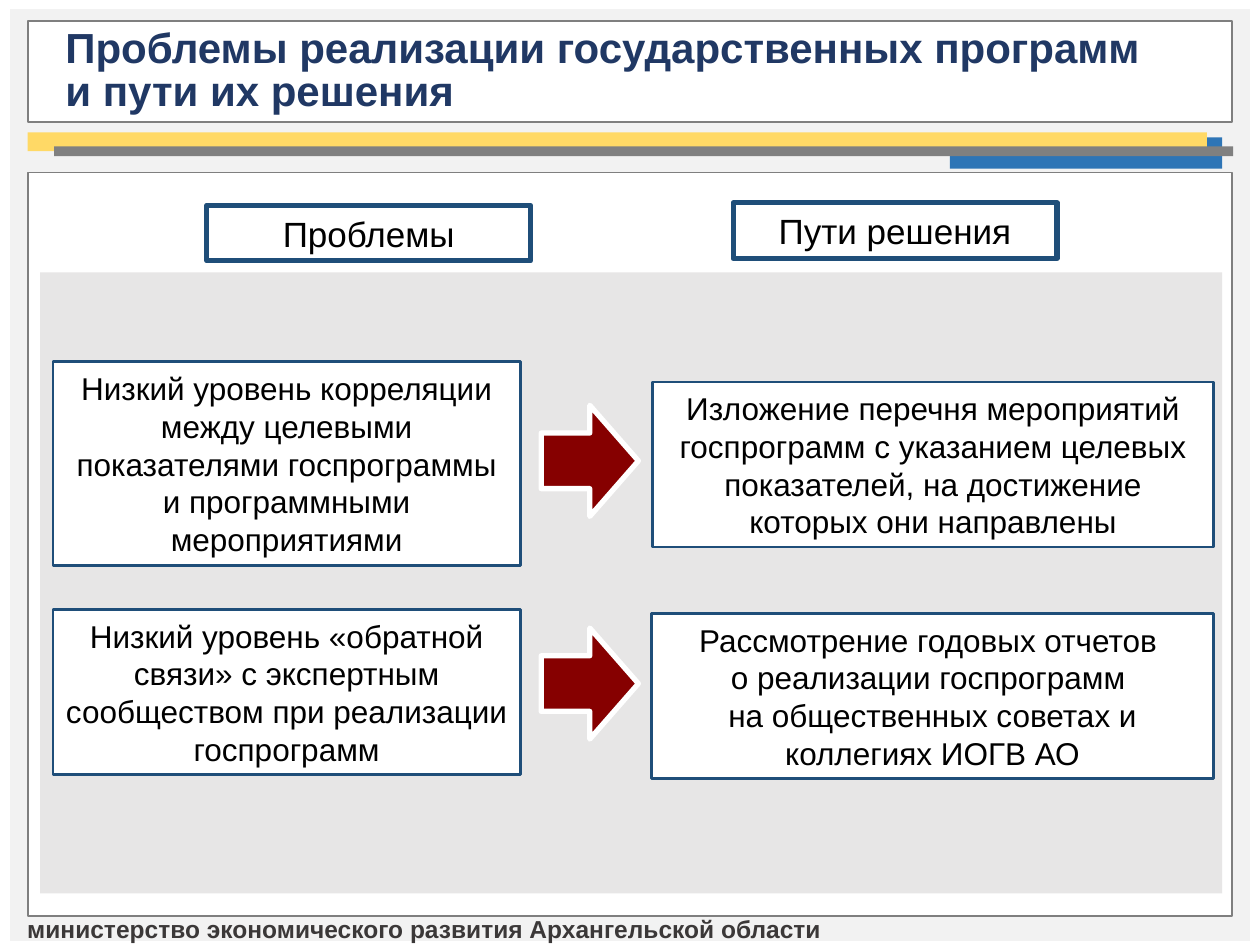
from pptx import Presentation
from pptx.dml.color import RGBColor
from pptx.enum.shapes import MSO_SHAPE
from pptx.enum.text import MSO_ANCHOR, PP_ALIGN
from pptx.util import Cm, Pt

RECT = MSO_SHAPE.RECTANGLE
PANEL = MSO_SHAPE.FLOWCHART_PROCESS
ARROW = MSO_SHAPE.DOWN_ARROW
CENTER, LEFT = PP_ALIGN.CENTER, PP_ALIGN.LEFT
MIDDLE, TOP = MSO_ANCHOR.MIDDLE, MSO_ANCHOR.TOP

COLORS = {
    "white": "FFFFFF", "black": "000000", "page": "F2F2F2", "area": "E7E6E6",
    "frame": "7F7F7F", "gray": "808080", "blue": "2E75B6", "yellow": "FFD966",
    "border": "1F4E79", "arrow": "860000", "title": "203864", "footer": "3B3838",
}

deck = Presentation()
deck.slide_width, deck.slide_height = Cm(25.4), Cm(19.05)
page = deck.slides.add_slide(deck.slide_layouts[6])


def add_box(kind, place, fill=None, line=None, width=1):
    box = page.shapes.add_shape(kind, *[Cm(value) for value in place])
    box.shadow.inherit = False
    if fill:
        box.fill.solid()
        box.fill.fore_color.rgb = RGBColor.from_string(COLORS[fill])
    else:
        box.fill.background()
    if line:
        box.line.color.rgb = RGBColor.from_string(COLORS[line])
        box.line.width = Pt(width)
    else:
        box.line.fill.background()
    return box


def write(box, text, size, color="black", bold=False, align=CENTER,
          anchor=MIDDLE, wrap=True, **spacing):
    frame = box.text_frame
    frame.word_wrap = wrap
    frame.vertical_anchor = anchor
    para = frame.paragraphs[0]
    para.text = text
    for name, value in {"alignment": align, **spacing}.items():
        setattr(para, name, value)
    for span in para.runs:
        for name, value in {"name": "Arial", "size": Pt(size), "bold": bold}.items():
            setattr(span.font, name, value)
        span.font.color.rgb = RGBColor.from_string(COLORS[color])


add_box(PANEL, (0.2, 0.18, 25, 18.8), "page")
add_box(PANEL, (0.56, 0.43, 24.28, 2.03), "white", "frame")
for place, color in [
    ((19.15, 2.77, 5.49, 0.63), "blue"),
    ((0.56, 2.67, 23.77, 0.38), "yellow"),
    ((1.09, 2.95, 23.77, 0.2), "gray"),
]:
    add_box(RECT, place, color)

title = page.shapes.add_textbox(Cm(1.07), Cm(0.46), Cm(22.56), Cm(2.01))
write(title, "Проблемы реализации государственных программ и пути их решения",
      24, "title", True, LEFT, TOP, line_spacing=0.85)

add_box(PANEL, (0.56, 3.48, 24.28, 14.99), "white", "frame")
footer = page.shapes.add_textbox(Cm(0.3), Cm(18.31), Cm(16.61), Cm(0.86))
write(footer, "министерство экономического развития Архангельской области",
      14, "footer", True, LEFT, TOP, wrap=False)

for left, top, heading in [(4.17, 4.14, "Проблемы"), (14.78, 4.09, "Пути решения")]:
    write(add_box(RECT, (left, top, 6.53, 1.12), None, "border", 3), heading, 20)

add_box(RECT, (0.81, 5.49, 23.83, 12.52), "area")

cards = [
    ((1.07, 7.29, 9.42, 4.11),
     "Низкий уровень корреляции между целевыми показателями госпрограммы "
     "и программными мероприятиями"),
    ((1.07, 12.29, 9.42, 3.33),
     "Низкий уровень «обратной связи» с экспертным сообществом при реализации "
     "госпрограмм"),
    ((13.16, 7.7, 11.3, 3.33),
     "Изложение перечня мероприятий госпрограмм с указанием целевых показателей, "
     "на достижение которых они направлены"),
    ((13.14, 12.37, 11.32, 3.33),
     "Рассмотрение годовых отчетов \nо реализации госпрограмм \n"
     "на общественных советах и коллегиях ИОГВ АО"),
]
for place, text in cards:
    card = add_box(RECT, place, "white", "border", 1.5)
    write(card, text, 18, space_after=Pt(24))

for top in (8.31, 12.8):
    arrow = add_box(ARROW, (10.77, top, 2.24, 1.96), "arrow", "white", 3)
    arrow.rotation = 270

deck.save("out.pptx")
